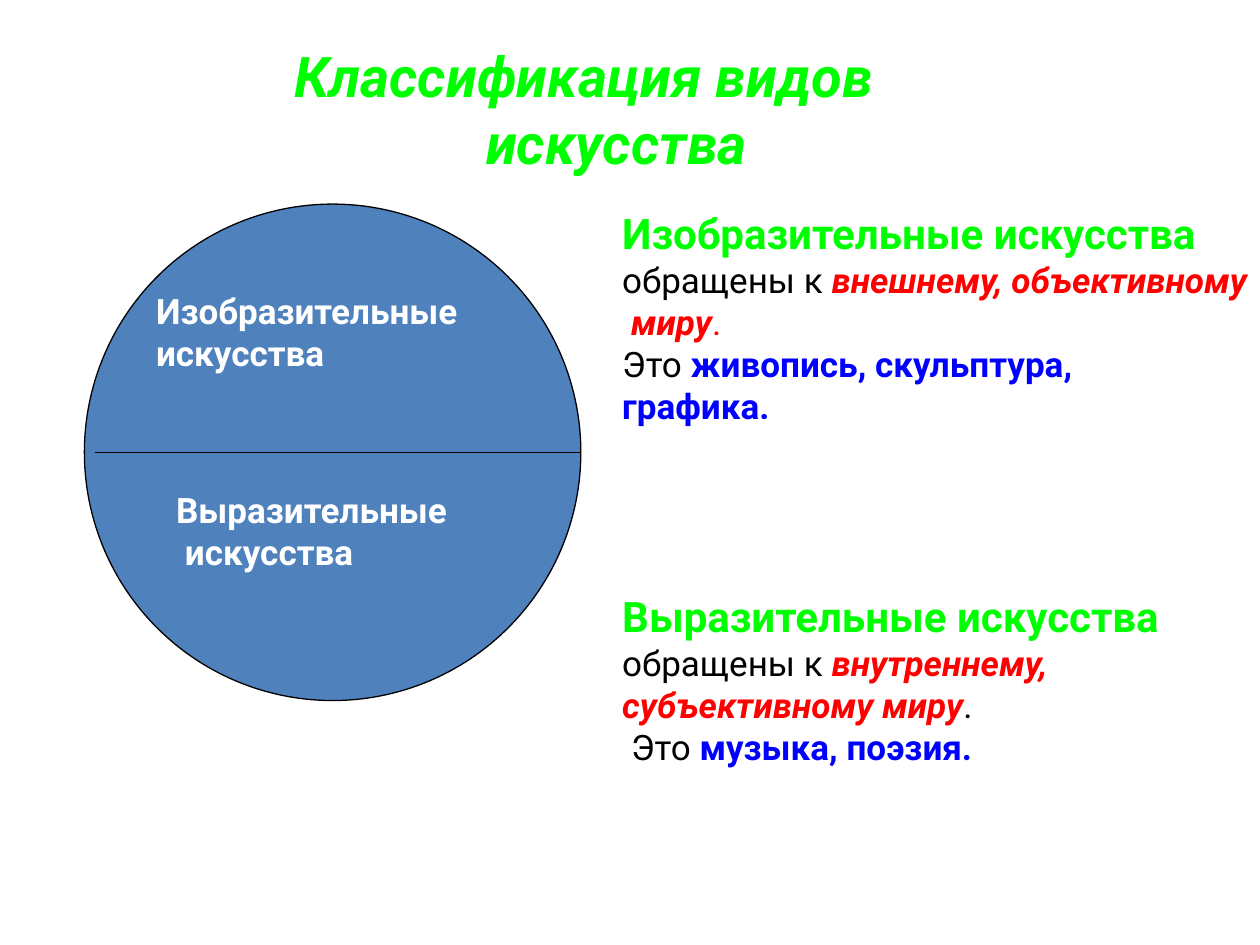
from dataclasses import dataclass

from lxml import etree
from pptx import Presentation
from pptx.dml.color import RGBColor
from pptx.enum.shapes import MSO_CONNECTOR, MSO_SHAPE
from pptx.oxml.ns import qn
from pptx.util import Inches, Pt

ELLIPSE = MSO_SHAPE.OVAL
STRAIGHT = MSO_CONNECTOR.STRAIGHT
FONT = "Roboto"
BLACK, WHITE, DISC_BLUE = "000000", "FFFFFF", "4F81BD"
GREEN, RED, BLUE = "00FF00", "FF0000", "0000FF"

# Run formats
TITLE = dict(size=Pt(32), color=GREEN, bold=True, italic=True)
LABEL = dict(size=Pt(20), color=WHITE, bold=True)
HEADING = dict(size=Pt(24), color=GREEN, bold=True)
PLAIN = dict(size=Pt(20), color=BLACK)
WORLD = dict(size=Pt(20), color=RED, bold=True, italic=True)
RED_STOP = dict(size=Pt(20), color=RED)
ARTS = dict(size=Pt(20), color=BLUE, bold=True)


@dataclass
class Para:
    runs: list[tuple[str, dict]]
    indent: float = 0
    before: float = 0


@dataclass
class TextBlock:
    left: float
    top: float
    width: float
    height: float
    paras: list[Para]
    margin_top: float = 0.05


BLOCKS = [
    # Labels of the two halves
    TextBlock(1.14, 2.25, 3.57, 0.77, [
        Para([("Изобразительные", LABEL)]),
        Para([("искусства", LABEL)]),
    ]),
    TextBlock(1.3, 3.83, 3.13, 0.77, [
        Para([("Выразительные", LABEL)]),
        Para([("искусства", LABEL)], indent=0.07),
    ]),
    # Explanations
    TextBlock(4.84, 1.01, 5.16, 5.17, [
        Para([("Изобразительные искусства", HEADING)]),
        Para([("обращены к ", PLAIN),
              ("внешнему, объективному  миру", WORLD), (".", RED_STOP)]),
        Para([("Это ", PLAIN), ("живопись, скульптура,", ARTS)]),
        Para([("графика.", ARTS)]),
        Para([("Выразительные искусства", HEADING)], before=94),
        Para([("обращены к ", PLAIN),
              ("внутреннему, субъективному миру", WORLD), (".", PLAIN)]),
        Para([("Это ", PLAIN), ("музыка, поэзия.", ARTS)], indent=0.07),
    ], margin_top=0.64),
    # Title
    TextBlock(2.24, 0.28, 6.54, 1.17, [
        Para([("Классификация видов", TITLE)]),
        Para([("искусства", TITLE)], indent=1.52),
    ]),
]


def rgb(value: str) -> RGBColor:
    return RGBColor.from_string(value)


def add_run(p, text: str, fmt: dict) -> None:
    r = p.add_run()
    r.text = text
    r.font.name = FONT
    for name, value in fmt.items():
        if name == "color":
            r.font.color.rgb = rgb(value)
        else:
            setattr(r.font, name, value)


def add_text(slide, block: TextBlock) -> None:
    sp = slide.shapes.add_textbox(Inches(block.left), Inches(block.top),
                                  Inches(block.width), Inches(block.height))
    tf = sp.text_frame
    tf.word_wrap = True
    tf.margin_top = Inches(block.margin_top)
    for i, para in enumerate(block.paras):
        p = tf.add_paragraph() if i else tf.paragraphs[0]
        if para.before:
            p.space_before = Pt(para.before)
        if para.indent:
            p._p.get_or_add_pPr().set("marL", str(Inches(para.indent)))
        for text, fmt in para.runs:
            add_run(p, text, fmt)


def set_outline(sp) -> None:
    sp.line.color.rgb = rgb(BLACK)
    sp.line.width = Pt(0.75)


def add_circle(slide) -> None:
    sp = slide.shapes.add_shape(ELLIPSE, Inches(0.67), Inches(1.62),
                                Inches(3.94), Inches(3.94))
    sp.shadow.inherit = False
    sp.fill.solid()
    sp.fill.fore_color.rgb = rgb(DISC_BLUE)
    set_outline(sp)


def add_divider(slide) -> None:
    sp = slide.shapes.add_connector(STRAIGHT, Inches(0.75), Inches(3.59),
                                    Inches(4.61), Inches(3.59))
    set_outline(sp)
    etree.SubElement(sp._element.spPr, qn("a:effectLst"))


def main() -> None:
    prs = Presentation()
    prs.slide_width, prs.slide_height = Inches(10), Inches(7.5)
    slide = prs.slides.add_slide(prs.slide_layouts[6])
    add_circle(slide)
    add_divider(slide)
    for block in BLOCKS:
        add_text(slide, block)
    prs.save("out.pptx")


if __name__ == "__main__":
    main()
